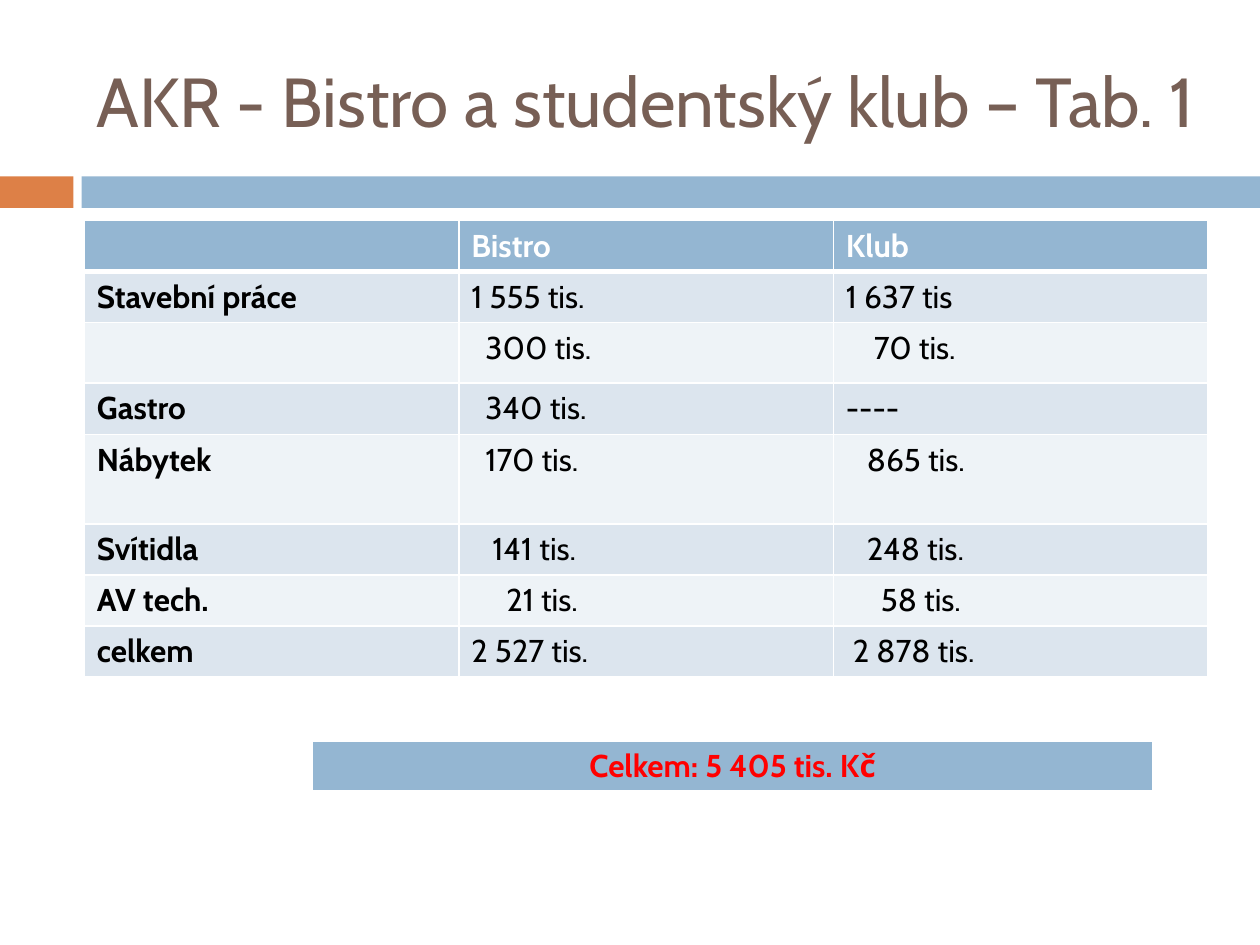
from pptx import Presentation
from pptx.dml.color import RGBColor
from pptx.enum.shapes import MSO_SHAPE
from pptx.enum.text import MSO_ANCHOR, MSO_AUTO_SIZE, PP_ALIGN
from pptx.oxml.ns import qn
from pptx.util import Pt
from lxml import etree

RECT = MSO_SHAPE.RECTANGLE
MIDDLE = MSO_ANCHOR.MIDDLE
NO_FIT = MSO_AUTO_SIZE.NONE
LEFT, CENTER = PP_ALIGN.LEFT, PP_ALIGN.CENTER

FONT = "Cabin"
INSET, SPACE = 7.2, 4
COLORS = {"blue": "94B6D2", "orange": "DD8047", "brown": "775F55",
          "odd": "DCE5EE", "even": "EEF3F7", "white": "FFFFFF",
          "black": "000000", "red": "FF0000"}

# Each amount comes with its indent, counted in space widths.
HEAD = ["", "Bistro", "Klub"]
ROWS = [
    (29.2, "Stavební práce", ("1 555 tis.", 0), ("1 637 tis", 0)),
    (34.6, "", ("300 tis.", 2), ("70 tis.", 4)),
    (29.2, "Gastro", ("340 tis.", 2), ("----", 0)),
    (51.2, "Nábytek", ("170 tis.", 2), ("865 tis.", 3)),
    (29.2, "Svítidla", ("141 tis.", 3), ("248 tis.", 3)),
    (29.2, "AV tech.", ("21 tis.", 5), ("58 tis.", 5)),
    (29.2, "celkem", ("2 527 tis.", 0), ("2 878 tis.", 1)),
]


def rgb(name):
    return RGBColor.from_string(COLORS[name])


def write(frame, text, color, size=18, bold=False, align=LEFT):
    para = frame.paragraphs[0]
    para.alignment = align
    run = para.add_run()
    run.text = text
    for key, value in {"name": FONT, "size": Pt(size), "bold": bold}.items():
        setattr(run.font, key, value)
    run.font.color.rgb = rgb(color)


def edge(cell, **widths):
    """Draw white cell borders; sides are L, R, T and B, widths in points."""
    props = cell._tc.get_or_add_tcPr()
    for side in "LRTB":
        line = etree.SubElement(props, qn(f"a:ln{side}"),
                                w=str(int(Pt(widths.get(side, 1)))))
        fill = etree.SubElement(line, qn("a:solidFill"))
        etree.SubElement(fill, qn("a:srgbClr"), val=COLORS["white"])


def paint(cell, color, **widths):
    edge(cell, **widths)
    cell.fill.solid()
    cell.fill.fore_color.rgb = rgb(color)


def add_grid(slide, left, top, width, heights, cols):
    frame = slide.shapes.add_table(len(heights), cols, Pt(left), Pt(top),
                                   Pt(width), Pt(sum(heights)))
    grid = frame.table
    for col in grid.columns:
        col.width = Pt(width / cols)
    for row, height in zip(grid.rows, heights):
        row.height = Pt(height)
    return grid


def add_title(slide, left, top, width, height):
    title = slide.shapes.title
    box = {"left": left, "top": top, "width": width, "height": height}
    for key, value in box.items():
        setattr(title, key, Pt(value))
    frame = title.text_frame
    for key, value in {"vertical_anchor": MIDDLE, "word_wrap": True,
                       "auto_size": NO_FIT}.items():
        setattr(frame, key, value)
    write(frame, "AKR - Bistro a studentský klub – Tab. 1", "brown", 39.6)


def add_band(slide, left, top, width, height):
    tab, gap = 42, 4.6
    start = left + tab + gap
    for x, wide, color in ((left, tab, "orange"),
                           (start, left + width - start, "blue")):
        bar = slide.shapes.add_shape(RECT, Pt(x), Pt(top), Pt(wide), Pt(height))
        bar.shadow.inherit = False
        bar.fill.solid()
        bar.fill.fore_color.rgb = rgb(color)
        bar.line.fill.background()


def add_costs(slide, left, top, width):
    heights = [29.2] + [row[0] for row in ROWS]
    grid = add_grid(slide, left, top, width, heights, len(HEAD))
    for c, text in enumerate(HEAD):
        cell = grid.cell(0, c)
        paint(cell, "blue", B=3)
        if text:
            write(cell.text_frame, text, "white", bold=True)
    for r, (_, label, *sums) in enumerate(ROWS, 1):
        for c, (text, indent) in enumerate([(label, 0), *sums]):
            cell = grid.cell(r, c)
            paint(cell, "odd" if r % 2 else "even", T=3 if r == 1 else 1)
            cell.margin_left = Pt(INSET + indent * SPACE)
            if text:
                write(cell.text_frame, text, "black", bold=c == 0)


def add_total(slide, left, top, width, height):
    cell = add_grid(slide, left, top, width, [height], 1).cell(0, 0)
    paint(cell, "blue", B=3)
    write(cell.text_frame, "Celkem: 5 405 tis. Kč", "red", bold=True,
          align=CENTER)


def main():
    deck = Presentation()
    deck.slide_width, deck.slide_height = Pt(720), Pt(540)
    slide = deck.slides.add_slide(deck.slide_layouts[5])
    add_band(slide, 0, 100.8, 720, 18)
    add_title(slide, 48.2, 18, 642, 78)
    add_costs(slide, 48.2, 126, 642)
    add_total(slide, 178.6, 423.4, 480, 29.2)
    deck.save("out.pptx")


if __name__ == "__main__":
    main()
